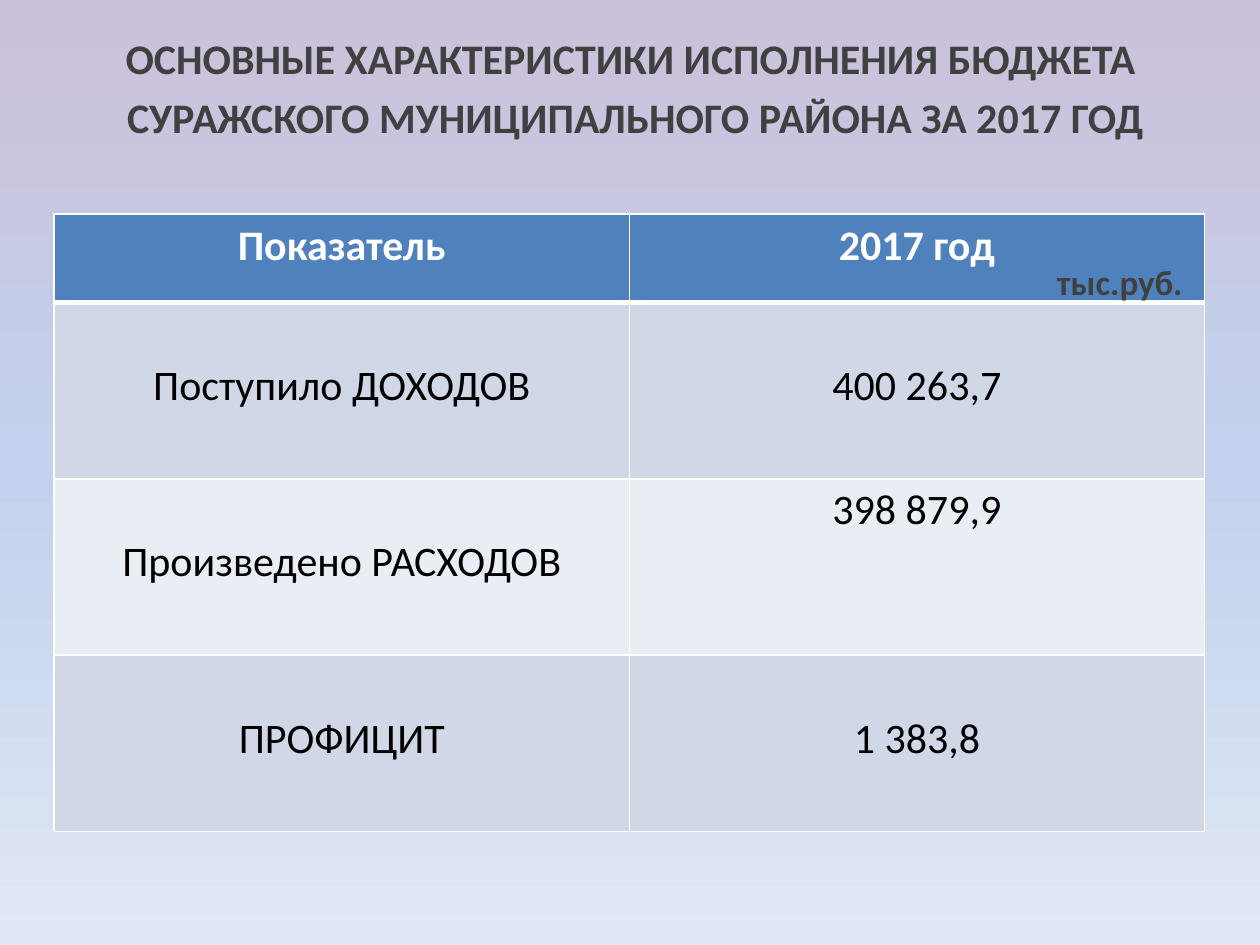
from copy import deepcopy

from lxml import etree
from pptx import Presentation
from pptx import util as u
from pptx.dml.color import RGBColor
from pptx.enum import text
from pptx.oxml import ns

TITLE = ["ОСНОВНЫЕ ХАРАКТЕРИСТИКИ ИСПОЛНЕНИЯ БЮДЖЕТА",
         " СУРАЖСКОГО МУНИЦИПАЛЬНОГО РАЙОНА ЗА 2017 ГОД"]
BUDGET = [("Показатель", "2017 год"),
          ("Поступило ДОХОДОВ", "400 263,7"),
          ("Произведено РАСХОДОВ", "398 879,9"),
          ("ПРОФИЦИТ", "1 383,8")]
TOP_ALIGNED = {"398 879,9"}


def rgb(value):
    return RGBColor.from_string(value)


def write(tf, lines, size=24, color="404040", bold=False,
          align=text.PP_ALIGN.CENTER, gap=0.2):
    """Fill a text frame, one paragraph a line; gap is a share of the size."""
    for i, line in enumerate(lines):
        p = tf.add_paragraph() if i else tf.paragraphs[0]
        p.alignment = align
        if i:
            p.space_before = u.Pt(size * gap)
        r = p.add_run()
        r.text = line
        r.font.name, r.font.size, r.font.bold = "Calibri", u.Pt(size), bold
        r.font.color.rgb = rgb(color)


def set_border(cell, side, width, color="FFFFFF"):
    ln = etree.Element(ns.qn("a:ln" + side), w=str(u.Pt(width)))
    fill = etree.SubElement(ln, ns.qn("a:solidFill"))
    etree.SubElement(fill, ns.qn("a:srgbClr"), val=color)
    return ln


class Deck:
    header_fill = "4F81BD"
    band_fills = ("E9EDF4", "D0D8E8")

    def __init__(self, width, height):
        self.prs = Presentation()
        self.prs.slide_width = u.Inches(width)
        self.prs.slide_height = u.Inches(height)
        self.s = self.prs.slides.add_slide(self.prs.slide_layouts[6])

    def background(self, colors):
        """Paint a downward gradient with evenly spaced colours."""
        fill = self.s.background.fill
        fill.gradient()
        fill.gradient_angle = 270
        stops = self.s._element.xpath(".//a:gsLst")[0]
        while len(stops) < len(colors):
            stops.append(deepcopy(stops[-1]))
        for i, (stop, color) in enumerate(zip(fill.gradient_stops, colors)):
            stop.position = i / (len(colors) - 1)
            stop.color.rgb = rgb(color)

    def label(self, box, lines, **style):
        sp = self.s.shapes.add_textbox(*map(u.Inches, box))
        sp.text_frame.word_wrap = True
        write(sp.text_frame, lines, **style)

    def table(self, box, rows, header_height, row_height):
        frame = self.s.shapes.add_table(len(rows), len(rows[0]),
                                        *map(u.Inches, box))
        for i, values in enumerate(rows):
            frame.table.rows[i].height = u.Inches(row_height if i else header_height)
            for j, value in enumerate(values):
                self.cell(frame.table.cell(i, j), value, i)

    def cell(self, cell, value, row):
        header = row == 0
        write(cell.text_frame, [value], bold=header,
              color="FFFFFF" if header else "000000")
        if not header and value not in TOP_ALIGNED:
            cell.margin_top = u.Inches(0.46)
        cell.fill.solid()
        cell.fill.fore_color.rgb = rgb(self.header_fill if header
                                       else self.band_fills[row % 2])
        thick = {(0, "B"), (1, "T")}
        tc_pr = cell._tc.get_or_add_tcPr()
        for i, side in enumerate("LRTB"):
            tc_pr.insert(i, set_border(cell, side, 3 if (row, side) in thick else 1))


def main():
    deck = Deck(10, 7.5)
    deck.band_fills = ("E9EDF4", "D0D8E8")
    deck.background(["CCC1DA", "C2D1ED", "E1E8F5"])
    deck.label((0.28, 0.21, 9.45, 1.02), TITLE, bold=True)
    deck.table((0.43, 1.7, 9.13, 4.9), BUDGET, header_height=0.7, row_height=1.4)
    deck.label((8.29, 2.02, 1.25, 0.39), ["тыс.руб."], size=20, bold=True,
               align=text.PP_ALIGN.LEFT)
    deck.prs.save("out.pptx")


if __name__ == "__main__":
    main()
